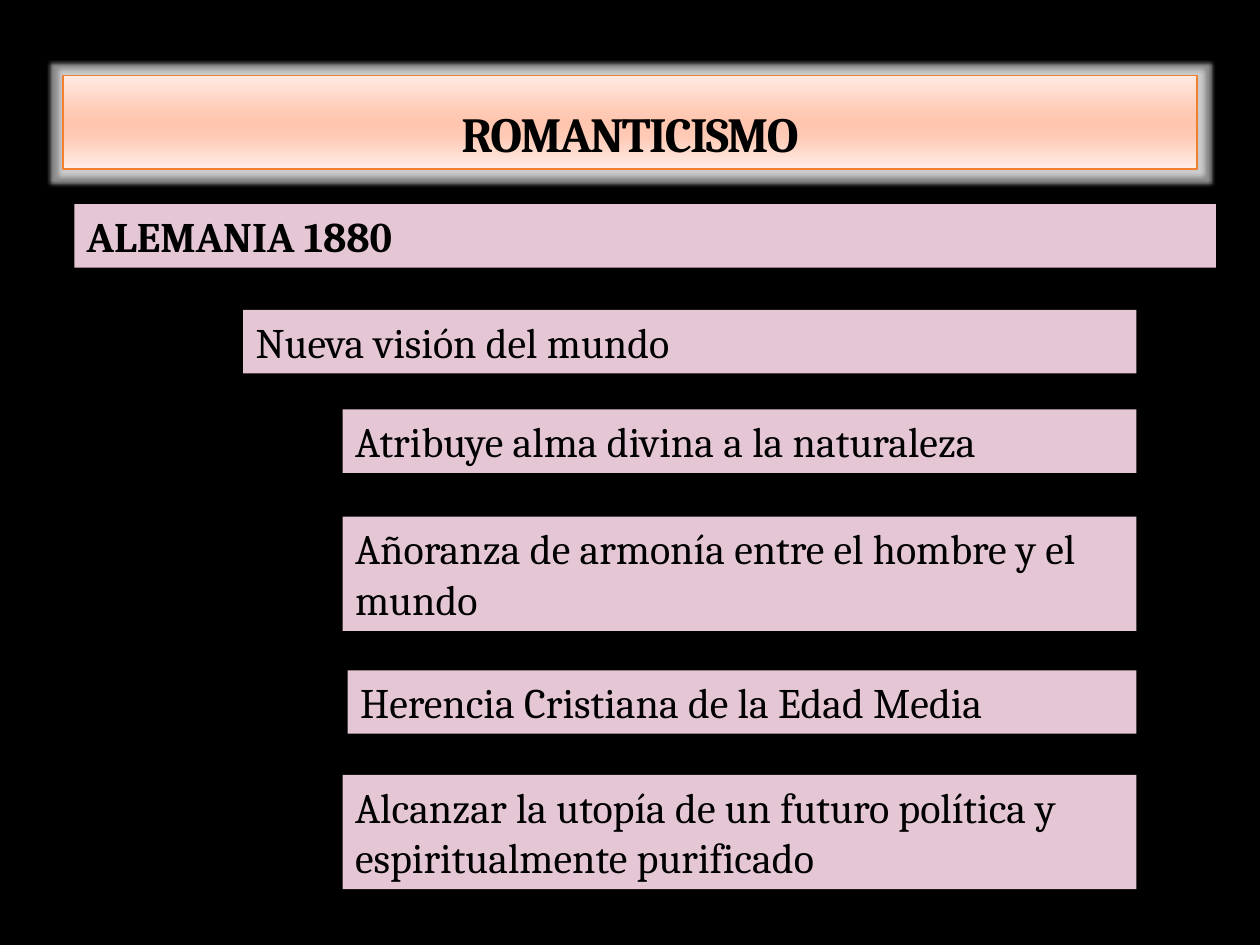
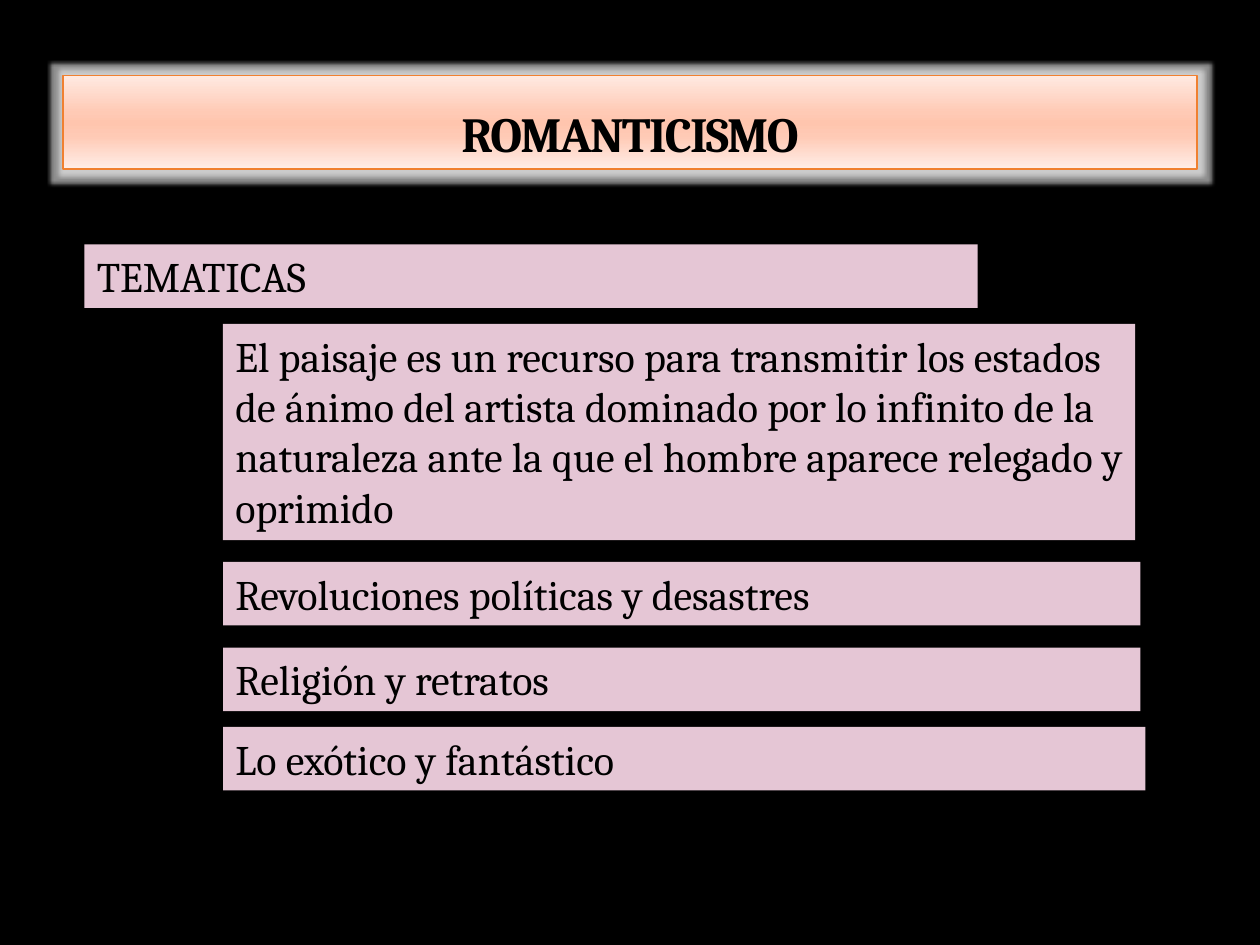
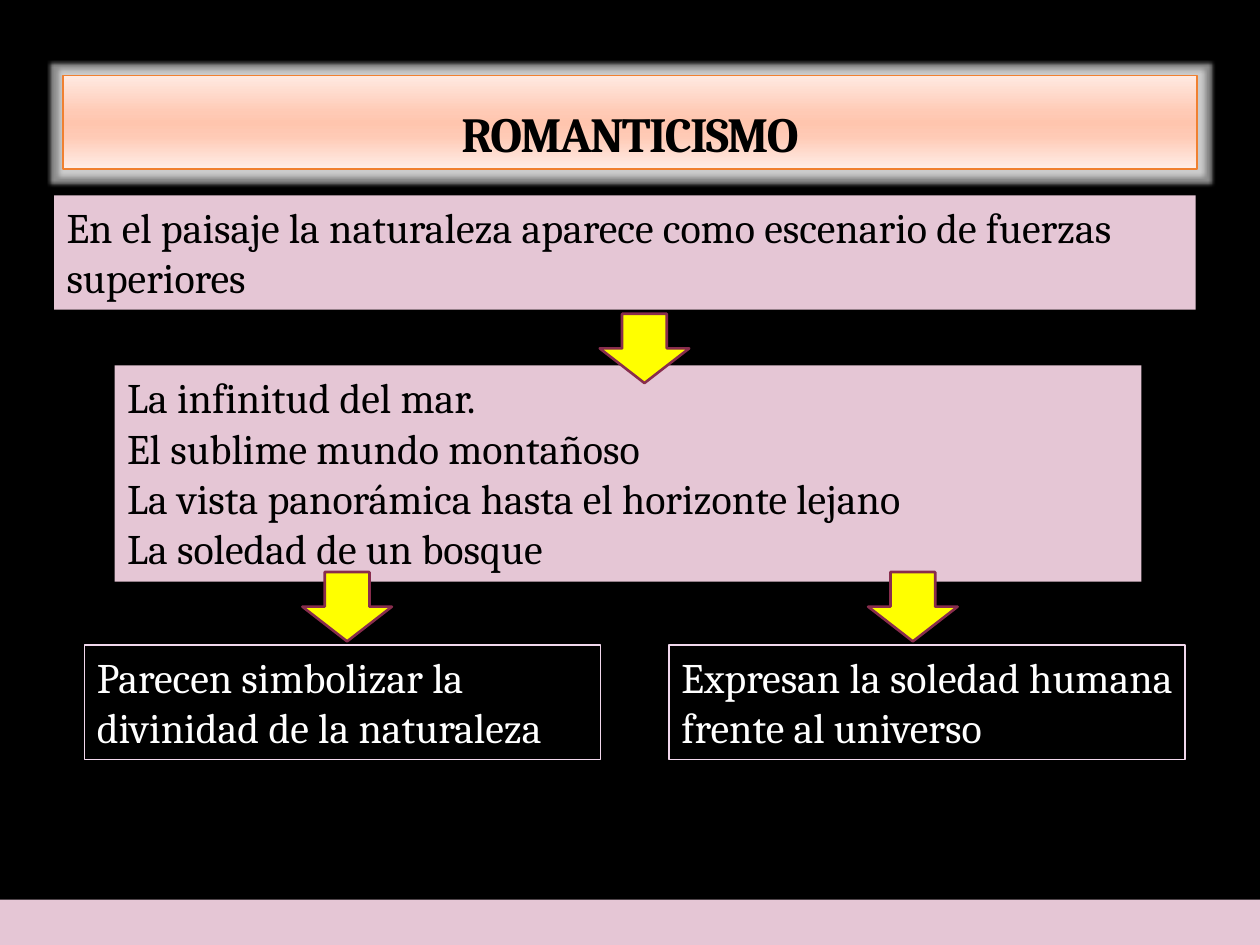
from lxml import etree
from pptx import Presentation
from pptx import util as u
from pptx.dml.color import RGBColor
from pptx.enum import shapes, text
from pptx.oxml.ns import qn

# Grid of 100 columns by 75 rows; every length below counts cells.
COLS, ROWS = 100, 75
CELL = u.Inches(0.1)
FONT = "Cambria"
BLACK, WHITE, PINK = "000000", "FFFFFF", "E5C6D5"
PALE, YELLOW, WINE, ORANGE = "F1D7EC", "FFFF00", "882D4D", "F08030"
STOPS = [(0, "FFE9E1"), (40, "FFCAB5"), (50, "FFC5AE"), (65, "FFCAB5"), (100, "FFEDE7")]
RECT, ARROW = shapes.MSO_SHAPE.RECTANGLE, shapes.MSO_SHAPE.DOWN_ARROW


def paint(color, tint):
    color.rgb = RGBColor.from_string(tint)


def node(parent, tag, **attrs):
    return etree.SubElement(parent, qn(tag), attrs)


def draw(slide, kind, x, y, w, h, fill=None, line=None, width=0.75):
    shape = slide.shapes.add_shape(kind, *(round(n * CELL) for n in (x, y, w, h)))
    shape.shadow.inherit = False
    if fill:
        shape.fill.solid()
        paint(shape.fill.fore_color, fill)
    else:
        shape.fill.background()
    if line:
        paint(shape.line.color, line)
        shape.line.width = u.Pt(width)
    else:
        shape.line.fill.background()
    return shape


def write(para, words, size=24, ink=BLACK, bold=False, align=text.PP_ALIGN.LEFT):
    para.alignment = align
    run = para.add_run()
    run.text = words
    run.font.name, run.font.size, run.font.bold = FONT, u.Pt(size), bold
    paint(run.font.color, ink)
    return run


def panel(slide, x, y, w, rows, *lines, fill=PINK, line=None, ink=BLACK, bold=False):
    """Box whose height follows from its number of text rows."""
    box = draw(slide, RECT, x, y, w, 1 + 4.04 * rows, fill, line)
    frame = box.text_frame
    frame.word_wrap = True
    frame.auto_size = text.MSO_AUTO_SIZE.SHAPE_TO_FIT_TEXT
    frame.vertical_anchor = text.MSO_ANCHOR.TOP
    for i, words in enumerate(lines):
        para = frame.add_paragraph() if i else frame.paragraphs[0]
        write(para, words, ink=ink, bold=bold)


def shade(shape):
    """Give the shape the peach gradient, running downwards."""
    shape.fill.gradient()
    shape.fill.gradient_angle = 270
    stops = shape.element.spPr.find(".//" + qn("a:gsLst"))
    for stop in list(stops):
        stops.remove(stop)
    for share, tint in STOPS:
        stop = node(stops, "a:gs", pos=str(share * 1000))
        node(stop, "a:srgbClr", val=tint)


def glow(shape):
    halo = node(shape.element.spPr.find(qn("a:effectLst")), "a:glow", rad="63500")
    tint = node(halo, "a:srgbClr", val=WHITE)
    node(tint, "a:alpha", val="55000")


def title(slide, words):
    bar = draw(slide, RECT, 5, 6, COLS - 10, 7.4, PINK, ORANGE, 1)
    shade(bar)
    glow(bar)
    bar.text_frame.word_wrap = True
    bar.text_frame.vertical_anchor = text.MSO_ANCHOR.BOTTOM
    run = write(bar.text_frame.paragraphs[0], words, 28, bold=True,
                align=text.PP_ALIGN.CENTER)
    run._r.get_or_add_rPr().set("spc", "-100")


def page(deck):
    slide = deck.slides.add_slide(deck.slide_layouts[6])
    slide.background.fill.solid()
    paint(slide.background.fill.fore_color, BLACK)
    title(slide, "ROMANTICISMO")
    return slide


def origin(slide):
    panel(slide, 5.9, 16.2, 90.6, 1, "ALEMANIA 1880", bold=True)
    right = 90.2
    for x, y, rows, words in [
        (19.3, 24.6, 1, "Nueva visión del mundo"),
        (27.2, 32.5, 1, "Atribuye alma divina a la naturaleza"),
        (27.2, 41, 2, "Añoranza de armonía entre el hombre y el mundo"),
        (27.6, 53.2, 1, "Herencia Cristiana de la Edad Media"),
        (27.2, 61.5, 2, "Alcanzar la utopía de un futuro política y "
                        "espiritualmente purificado"),
    ]:
        panel(slide, x, y, right - x, rows, words)


def themes(slide):
    panel(slide, 6.7, 19.4, 70.9, 1, "TEMATICAS")
    for y, w, rows, words in [
        (25.7, 72.4, 4, "El paisaje es un recurso para transmitir los estados de ánimo "
                        "del artista dominado por lo infinito de la naturaleza ante la "
                        "que el hombre aparece relegado y oprimido"),
        (44.6, 72.8, 1, "Revoluciones políticas y desastres"),
        (51.4, 72.8, 1, "Religión y retratos"),
        (57.7, 73.2, 1, "Lo exótico y fantástico"),
    ]:
        panel(slide, 17.7, y, w, rows, words)


def nature(slide):
    panel(slide, 4.3, 15.5, 90.6, 2,
          "En el paisaje la naturaleza aparece como escenario de fuerzas superiores")
    draw(slide, RECT, 0, 71.4, COLS, ROWS - 71.4, PINK)
    panel(slide, 9.1, 29, 81.5, 4, "La infinitud del mar.", "El sublime mundo montañoso",
          "La vista panorámica hasta el horizonte lejano", "La soledad de un bosque")
    for x, words in [(6.7, "Parecen simbolizar la divinidad de la naturaleza"),
                     (53.1, "Expresan la soledad humana frente al universo")]:
        panel(slide, x, 51.2, 40.95, 2, words, fill=None, line=PALE, ink=WHITE)
    for x, y in [(47.6, 24.9), (24, 45.4), (68.9, 45.4)]:
        draw(slide, ARROW, x, y, 7.1, 5.5, YELLOW, WINE, 1.5)


def main():
    deck = Presentation()
    deck.slide_width, deck.slide_height = COLS * CELL, ROWS * CELL
    for fill in (origin, themes, nature):
        fill(page(deck))
    deck.save("out.pptx")


if __name__ == "__main__":
    main()
